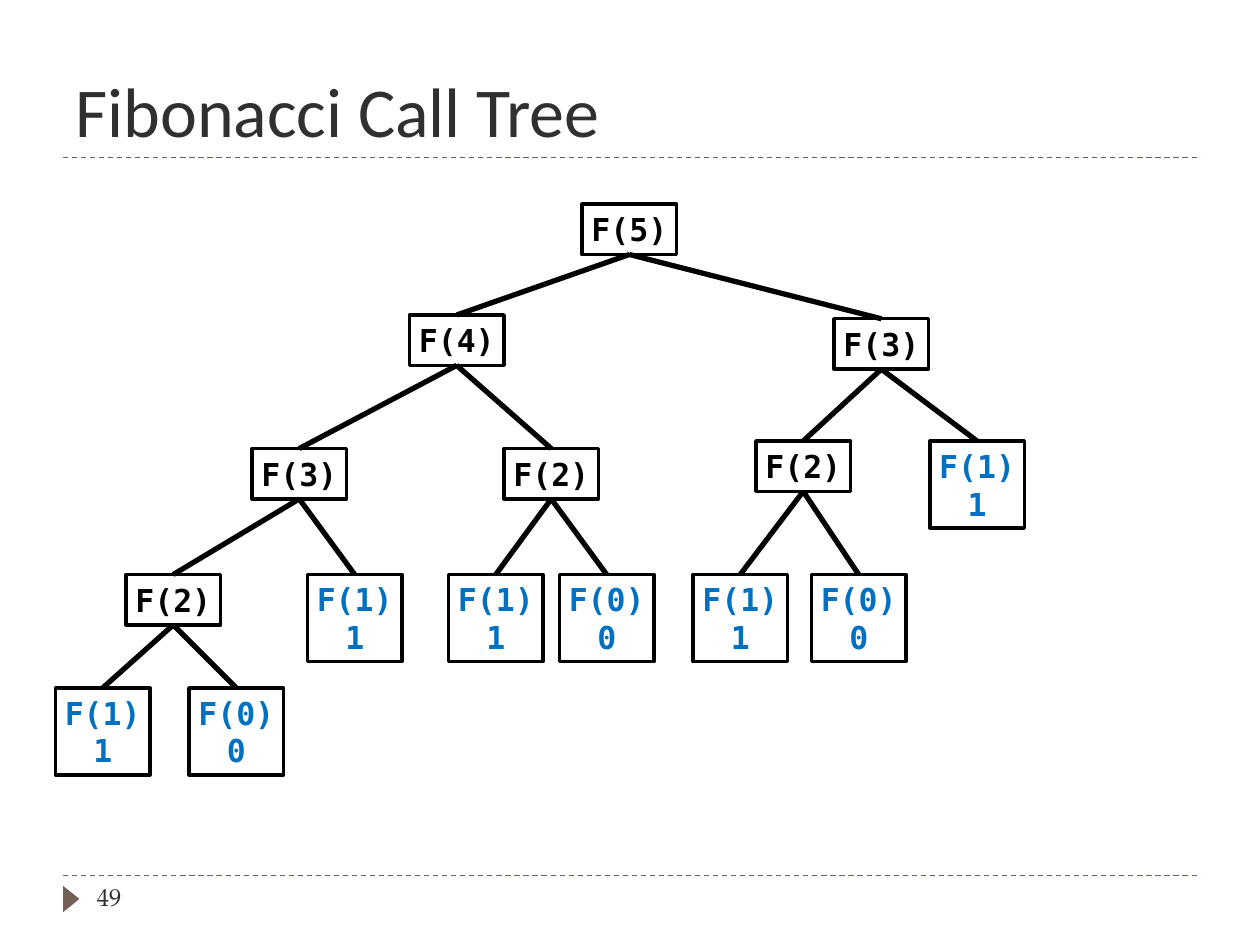
from dataclasses import dataclass

import pptx
import pptx.dml.color
import pptx.enum.dml
import pptx.enum.shapes
import pptx.enum.text
import pptx.oxml.ns
import pptx.util
from lxml import etree

Inches = pptx.util.Inches
ANCHOR = pptx.enum.text.MSO_ANCHOR
ALIGN = pptx.enum.text.PP_ALIGN
SHAPE = pptx.enum.shapes.MSO_SHAPE


@dataclass(frozen=True)
class Theme:
    heading: str = "303030"
    accent: str = "726056"
    call: str = "000000"
    base_case: str = "0070C0"
    title_font: str = "Calibri"
    code_font: str = "DejaVu Sans Mono"
    number_font: str = "TeX Gyre Pagella"
    title_size: int = 40
    code_size: int = 18
    number_size: int = 14
    rule_width: float = 0.75
    box_width: int = 2
    branch_width: int = 3


THEME = Theme()
CALL_WIDTH, CALL_HEIGHT, BASE_HEIGHT = 0.75, 0.4, 0.69

CALL_TREE = (5, 4.62, 1.62, [
    (4, 3.25, 2.5, [
        (3, 2, 3.56, [
            (2, 1, 4.56, [(1, 0.44, 5.46, []), (0, 1.5, 5.46, [])]),
            (1, 2.44, 4.56, []),
        ]),
        (2, 4, 3.56, [(1, 3.56, 4.56, []), (0, 4.44, 4.56, [])]),
    ]),
    (3, 6.62, 2.53, [
        (2, 6, 3.5, [(1, 5.5, 4.56, []), (0, 6.44, 4.56, [])]),
        (1, 7.38, 3.5, []),
    ]),
])


def rgb(color):
    return pptx.dml.color.RGBColor.from_string(color)


def write(frame, text, font, size, color, bold=False, align=ALIGN.LEFT):
    frame.text = text
    for paragraph in frame.paragraphs:
        paragraph.alignment = align
        for run in paragraph.runs:
            run.font.name = font
            run.font.size = pptx.util.Pt(size)
            run.font.bold = bold
            run.font.color.rgb = rgb(color)


def add_label(slide, bounds, text, font, size, anchor):
    label = slide.shapes.add_textbox(*map(Inches, bounds))
    label.text_frame.word_wrap = True
    label.text_frame.vertical_anchor = anchor
    write(label.text_frame, text, font, size, THEME.heading)


def add_line(slide, start, end, color, width):
    line = slide.shapes.add_connector(
        pptx.enum.shapes.MSO_CONNECTOR.STRAIGHT, *map(Inches, start + end))
    line.line.color.rgb = rgb(color)
    line.line.width = pptx.util.Pt(width)
    etree.SubElement(line._element.spPr, pptx.oxml.ns.qn("a:effectLst"))
    return line


def add_rule(slide, top):
    rule = add_line(slide, (0.5, top), (9.5, top), THEME.accent, THEME.rule_width)
    rule.line.dash_style = pptx.enum.dml.MSO_LINE.DASH


def add_page_marker(slide):
    marker = slide.shapes.add_shape(
        SHAPE.ISOSCELES_TRIANGLE, *map(Inches, (0.46, 7.07, 0.21, 0.13)))
    marker.rotation = 90
    marker.shadow.inherit = False
    marker.fill.solid()
    marker.fill.fore_color.rgb = rgb(THEME.accent)
    marker.line.fill.background()


def add_call(slide, n, left, top):
    is_base = n < 2
    height = BASE_HEIGHT if is_base else CALL_HEIGHT
    call = slide.shapes.add_shape(
        SHAPE.RECTANGLE, *map(Inches, (left, top, CALL_WIDTH, height)))
    call.shadow.inherit = False
    call.fill.background()
    call.line.color.rgb = rgb(THEME.call)
    call.line.width = pptx.util.Pt(THEME.box_width)
    call.text_frame.word_wrap = False
    call.text_frame.vertical_anchor = ANCHOR.MIDDLE
    text = f"F({n})\n{n}" if is_base else f"F({n})"
    color = THEME.base_case if is_base else THEME.call
    write(call.text_frame, text, THEME.code_font, THEME.code_size, color,
          bold=True, align=ALIGN.CENTER)
    return call


def add_calls(slide, node, branches):
    n, left, top, children = node
    call = add_call(slide, n, left, top)
    for child in children:
        branches.append((call, add_calls(slide, child, branches)))
    return call


def add_branch(slide, caller, callee):
    branch = add_line(slide, (0, 0), (1, 1), THEME.call, THEME.branch_width)
    branch.begin_connect(caller, 2)
    branch.end_connect(callee, 0)


def main():
    deck = pptx.Presentation()
    deck.slide_width, deck.slide_height = Inches(10), Inches(7.5)
    slide = deck.slides.add_slide(deck.slide_layouts[6])

    for top in (6.95, 1.25):
        add_rule(slide, top)
    add_page_marker(slide)
    add_label(slide, (0.5, 0.25, 9, 1), "Fibonacci Call Tree",
              THEME.title_font, THEME.title_size, ANCHOR.BOTTOM)
    add_label(slide, (0.67, 6.95, 2.17, 0.4), "49",
              THEME.number_font, THEME.number_size, ANCHOR.TOP)

    branches = []
    add_calls(slide, CALL_TREE, branches)
    for caller, callee in branches:
        add_branch(slide, caller, callee)

    deck.save("out.pptx")


main()
